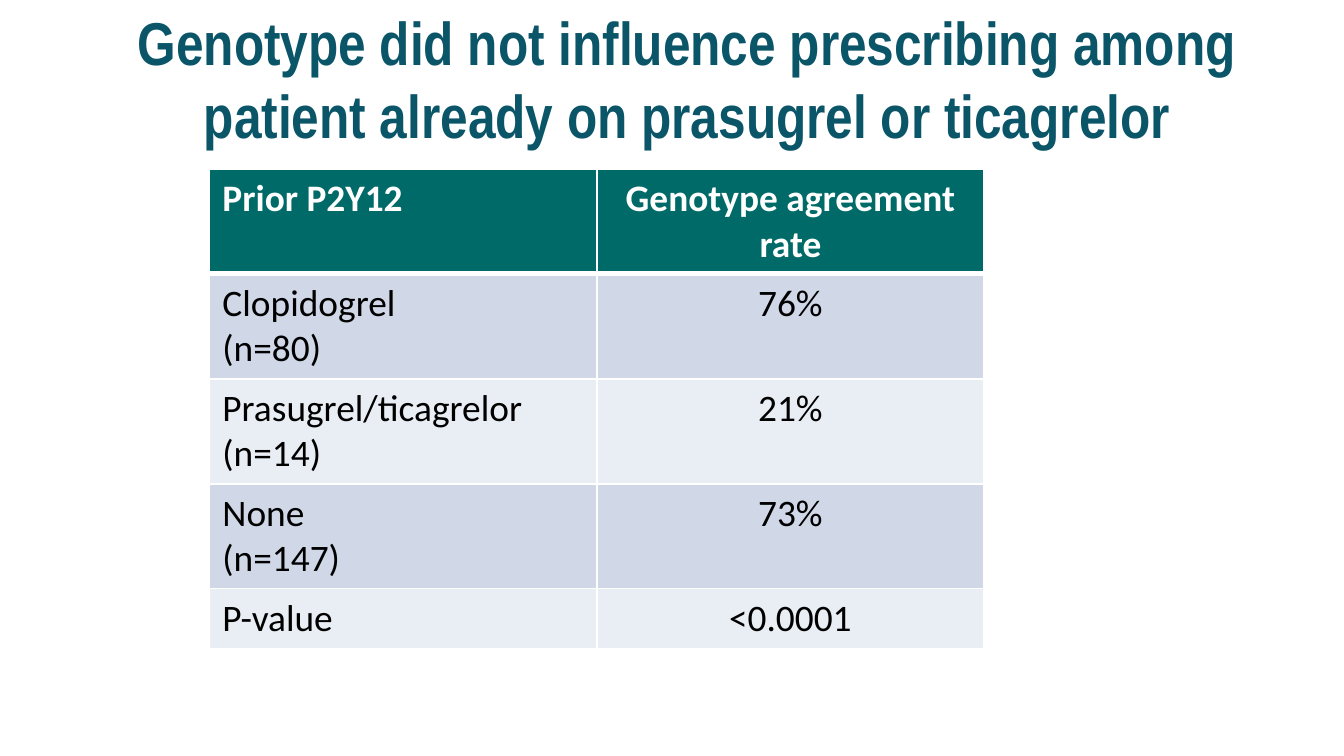
import pptx
import pptx.util
import pptx.dml.color
import pptx.enum.text
import pptx.oxml
import pptx.oxml.ns

PX = 6804  # EMU per px, 134.4 px to the inch
COLORS = {
    "title": "0B5569", "header": "006A68", "band": "D0D8E8",
    "light": "E9EDF4", "white": "FFFFFF", "black": "000000",
}
TITLE = "Genotype did not influence prescribing among patient already on prasugrel or ticagrelor"
ROWS = [
    (["Prior P2Y12"], "Genotype agreement rate"),
    (["Clopidogrel", "(n=80)"], "76%"),
    (["Prasugrel/ticagrelor", "(n=14)"], "21%"),
    (["None", "(n=147)"], "73%"),
    (["P-value"], "<0.0001"),
]
COL_WIDTHS = [388, 387]
ROW_HEIGHTS = [101, 101, 101, 101, 60]
CENTER = pptx.enum.text.PP_ALIGN.CENTER
LEFT = pptx.enum.text.PP_ALIGN.LEFT


def px(n):
    return pptx.util.Emu(n * PX)


def rgb(name):
    return pptx.dml.color.RGBColor.from_string(COLORS[name])


def write(tf, lines, align, color, **fmt):
    """Put one paragraph per line into a text frame."""
    tf.word_wrap = True
    for i, line in enumerate(lines):
        p = tf.paragraphs[0] if i == 0 else tf.add_paragraph()
        p.alignment = align
        r = p.add_run()
        r.text = line
        for key, value in fmt.items():
            setattr(r.font, key, value)
        r.font.color.rgb = rgb(color)


def set_borders(cell, widths):
    """Add white cell borders; widths maps a side (L, R, T, B) to points."""
    tc_pr = cell._tc.get_or_add_tcPr()
    for i, (side, width) in enumerate(widths.items()):
        ln = pptx.oxml.parse_xml(
            f'<a:ln{side} {pptx.oxml.ns.nsdecls("a")} w="{pptx.util.Pt(width)}">'
            f'<a:solidFill><a:srgbClr val="{COLORS["white"]}"/></a:solidFill></a:ln{side}>')
        tc_pr.insert(i, ln)


def add_title(slide):
    sp = slide.shapes.title
    box = {"left": 67, "top": 20, "width": 1241, "height": 116}
    for key, value in box.items():
        setattr(sp, key, px(value))
    tf = sp.text_frame
    tf.auto_size = pptx.enum.text.MSO_AUTO_SIZE.NONE
    tf.vertical_anchor = pptx.enum.text.MSO_ANCHOR.MIDDLE
    write(tf, [TITLE], CENTER, "title",
          name="Arial Narrow", size=pptx.util.Pt(32.4), bold=True)


def add_agreement_table(slide):
    frame = slide.shapes.add_table(
        len(ROWS), len(COL_WIDTHS), px(209), px(169),
        px(sum(COL_WIDTHS)), px(sum(ROW_HEIGHTS)))
    table = frame.table
    for col, width in zip(table.columns, COL_WIDTHS):
        col.width = px(width)
    for row, height in zip(table.rows, ROW_HEIGHTS):
        row.height = px(height)

    for i, (group, rate) in enumerate(ROWS):
        header = i == 0
        fill = "header" if header else ("band" if i % 2 else "light")
        sides = {"L": 1, "R": 1, "T": 3 if i == 1 else 1, "B": 3 if header else 1}
        for j, (lines, align) in enumerate([(group, LEFT), ([rate], CENTER)]):
            cell = table.cell(i, j)
            cell.fill.solid()
            cell.fill.fore_color.rgb = rgb(fill)
            set_borders(cell, sides)
            write(cell.text_frame, lines, align, "white" if header else "black",
                  name="Calibri", size=pptx.util.Pt(20), bold=header)


def main():
    prs = pptx.Presentation()
    prs.slide_width, prs.slide_height = px(1344), px(756)
    slide = prs.slides.add_slide(prs.slide_layouts[5])  # title only
    add_title(slide)
    add_agreement_table(slide)
    prs.save("out.pptx")


if __name__ == "__main__":
    main()
